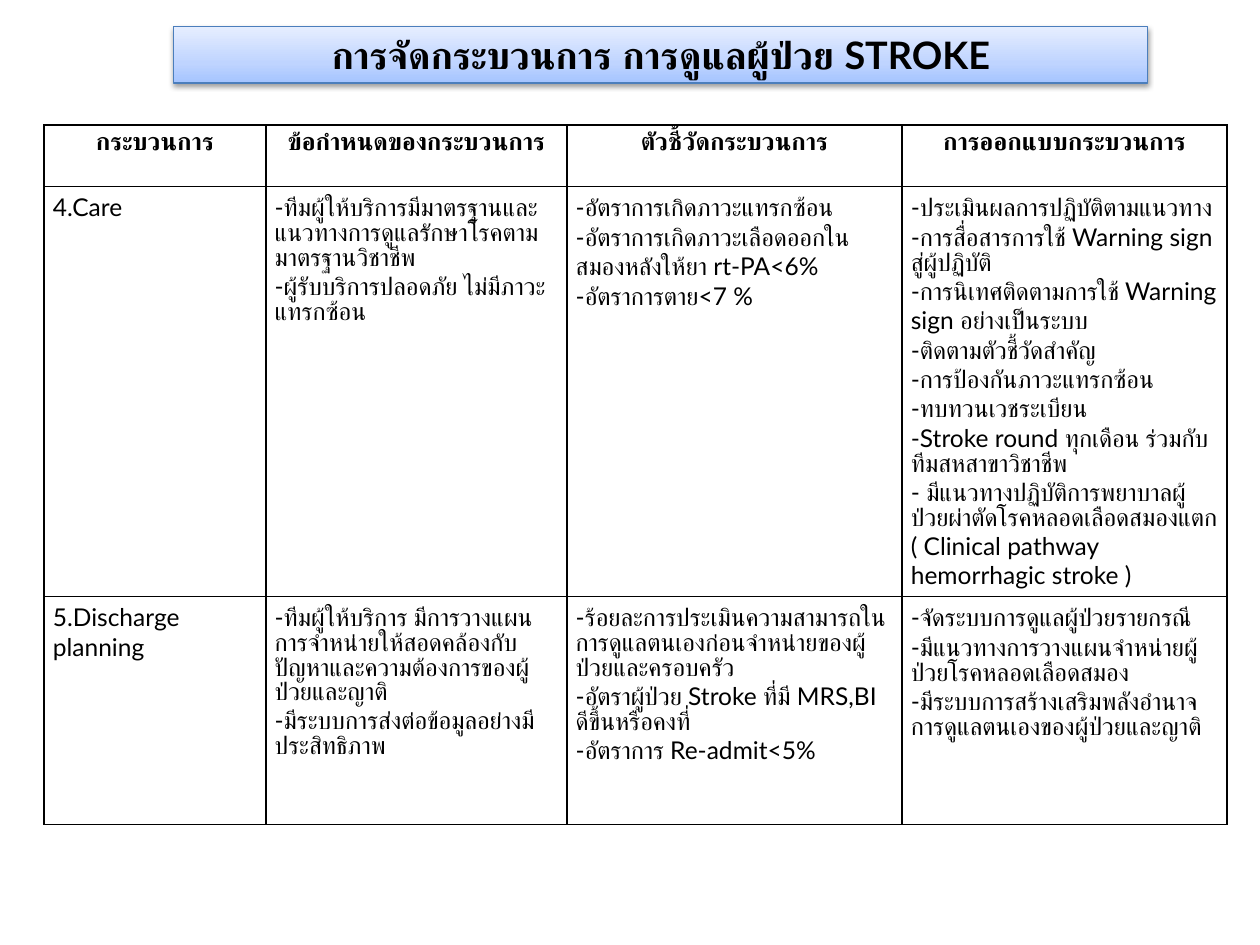
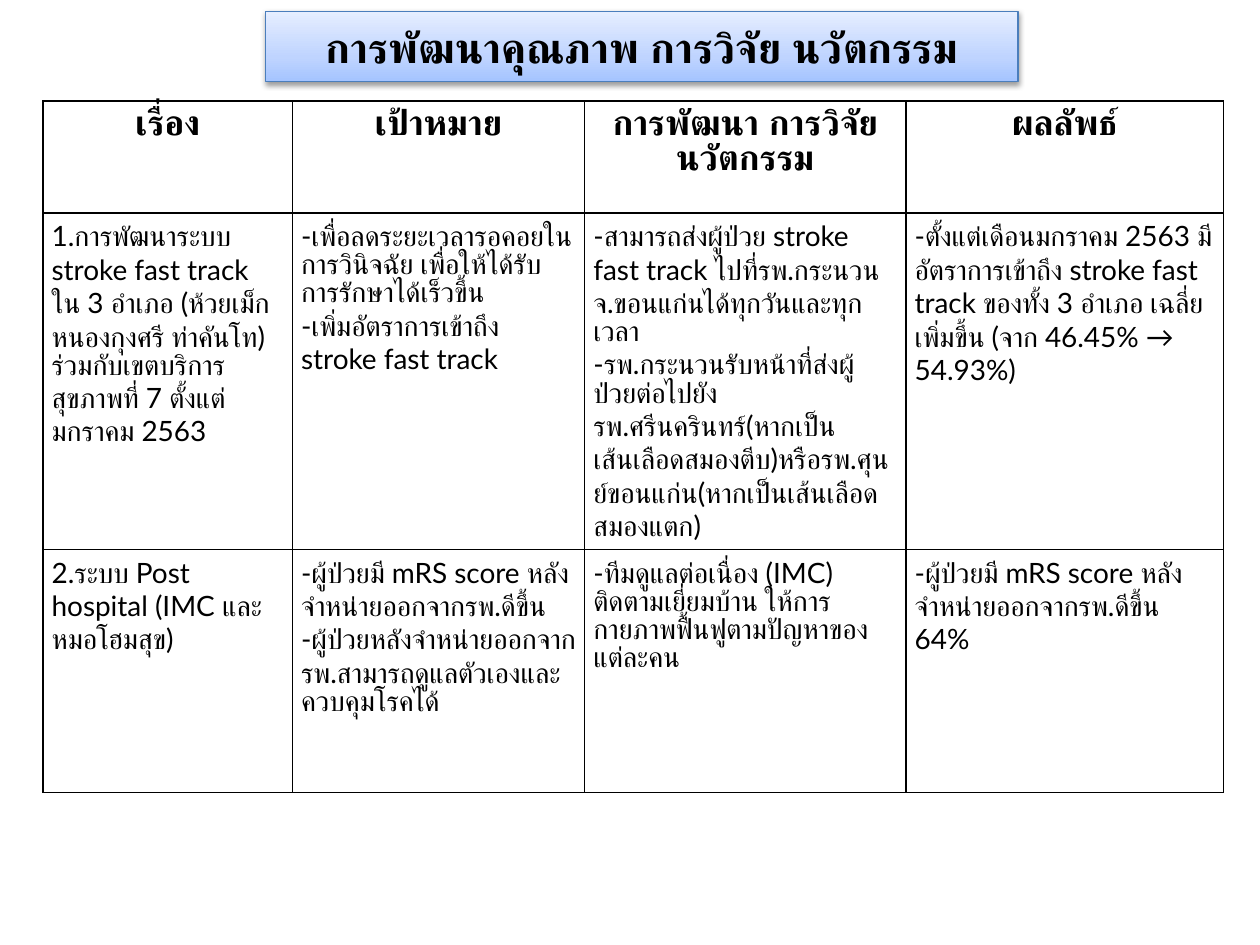
"""Build two slides on stroke care, each a title band above a table."""
from dataclasses import dataclass

from lxml import etree
from pptx import Presentation
from pptx import util as u
from pptx.dml import color
from pptx.enum import shapes, text
from pptx.oxml import ns


@dataclass(frozen=True)
class Theme:
    font: str = "Lato"
    ink: str = "000000"
    edge: str = "4B7EBC"
    band: tuple = ((0, "A4C4FF"), (35, "BFD4FF"), (100, "E6EEFF"))
    line: float = 0.75
    grid: float = 1
    pad: tuple = (0.07, 0.05)


def put(obj, vals):
    for name, val in vals.items():
        setattr(obj, name, val)


def node(home, tag, at=None, **vals):
    item = etree.Element(ns.qn(f"a:{tag}"), {k: str(v) for k, v in vals.items()})
    home.insert(len(home) if at is None else at, item)
    return item


class Deck:
    def __init__(self, theme):
        self.theme = theme
        self.file = Presentation()
        put(self.file, {"slide_width": u.Inches(10), "slide_height": u.Inches(7.5)})
        self.slide = None

    def page(self):
        self.slide = self.file.slides.add_slide(self.file.slide_layouts[6])

    def words(self, frame, copy, size, bold=False, mid=False):
        frame.text = copy
        frame.word_wrap = True
        look = {"name": self.theme.font, "size": u.Pt(size), "bold": bold}
        for para in frame.paragraphs:
            para.alignment = text.PP_ALIGN.CENTER if mid else text.PP_ALIGN.LEFT
            for run in para.runs:
                put(run.font, look)
                run.font.color.rgb = color.RGBColor.from_string(self.theme.ink)

    def title(self, box, copy, size):
        band = self.slide.shapes.add_shape(
            shapes.MSO_SHAPE.RECTANGLE, *map(u.Inches, box))
        band.shadow.inherit = False
        band.line.color.rgb = color.RGBColor.from_string(self.theme.edge)
        band.line.width = u.Pt(self.theme.line)
        props = band.element.spPr
        grad = node(props, "gradFill", 2, rotWithShape=1)
        stops = node(grad, "gsLst")
        for pos, tint in self.theme.band:
            node(node(stops, "gs", pos=pos * 1000), "srgbClr", val=tint)
        node(grad, "lin", ang=270 * 60000, scaled=0)
        glow = node(props.find(ns.qn("a:effectLst")), "outerShdw",
                    blurRad=u.Pt(3.1), dist=u.Pt(1.6), dir=90 * 60000, rotWithShape=0)
        node(node(glow, "srgbClr", val=self.theme.ink), "alpha", val=38000)
        band.text_frame.vertical_anchor = text.MSO_ANCHOR.MIDDLE
        self.words(band.text_frame, copy, size, True, True)

    def edges(self, cell):
        props = cell._tc.get_or_add_tcPr()
        for at, side in enumerate("LRTB"):
            line = node(props, f"ln{side}", at, w=u.Pt(self.theme.grid))
            node(node(line, "solidFill"), "srgbClr", val=self.theme.ink)

    def table(self, spot, cols, rows, data, head, body):
        size = (sum(cols), sum(rows))
        grid = self.slide.shapes.add_table(
            len(rows), len(cols), *map(u.Inches, spot + size)).table
        put(grid, {"first_row": False, "horz_banding": False})
        for col, wide in zip(grid.columns, cols):
            col.width = u.Inches(wide)
        side, top = map(u.Inches, self.theme.pad)
        pads = {"margin_left": side, "margin_right": side,
                "margin_top": top, "margin_bottom": top}
        for r, (row, tall) in enumerate(zip(grid.rows, rows)):
            row.height = u.Inches(tall)
            for cell, copy in zip(row.cells, data[r]):
                put(cell, pads)
                cell.fill.background()
                self.edges(cell)
                first = r == 0
                self.words(cell.text_frame, copy, head if first else body, first, first)


CARE = (
    ("กระบวนการ", "ข้อกำหนดของกระบวนการ", "ตัวชี้วัดกระบวนการ", "การออกแบบกระบวนการ"),
    ("4.Care",
     "-ทีมผู้ให้บริการมีมาตรฐานและแนวทางการดูแลรักษาโรคตามมาตรฐานวิชาชีพ\n"
     "-ผู้รับบริการปลอดภัย ไม่มีภาวะแทรกซ้อน",
     "-อัตราการเกิดภาวะแทรกซ้อน\n"
     "-อัตราการเกิดภาวะเลือดออกในสมองหลังให้ยา rt-PA<6%\n"
     "-อัตราการตาย<7 %",
     "-ประเมินผลการปฏิบัติตามแนวทาง\n"
     "-การสื่อสารการใช้ Warning sign สู่ผู้ปฏิบัติ\n"
     "-การนิเทศติดตามการใช้ Warning sign อย่างเป็นระบบ\n"
     "-ติดตามตัวชี้วัดสำคัญ\n"
     "-การป้องกันภาวะแทรกซ้อน\n"
     "-ทบทวนเวชระเบียน\n"
     "-Stroke round ทุกเดือน ร่วมกับทีมสหสาขาวิชาชีพ\n"
     "- มีแนวทางปฏิบัติการพยาบาลผู้ป่วยผ่าตัดโรคหลอดเลือดสมองแตก\n"
     "( Clinical pathway hemorrhagic stroke )"),
    ("5.Discharge planning",
     "-ทีมผู้ให้บริการ มีการวางแผนการจำหน่ายให้สอดคล้องกับปัญหาและความต้องการของผู้ป่วยและญาติ\n"
     "-มีระบบการส่งต่อข้อมูลอย่างมีประสิทธิภาพ",
     "-ร้อยละการประเมินความสามารถในการดูแลตนเองก่อนจำหน่ายของผู้ป่วยและครอบครัว\n"
     "-อัตราผู้ป่วย Stroke ที่มี MRS,BI ดีขึ้นหรือคงที่\n"
     "-อัตราการ Re-admit<5%",
     "-จัดระบบการดูแลผู้ป่วยรายกรณี\n"
     "-มีแนวทางการวางแผนจำหน่ายผู้ป่วยโรคหลอดเลือดสมอง\n"
     "-มีระบบการสร้างเสริมพลังอำนาจการดูแลตนเองของผู้ป่วยและญาติ"),
)

GROWTH = (
    ("เรื่อง", "เป้าหมาย", "การพัฒนา การวิจัย นวัตกรรม", "ผลลัพธ์"),
    ("1.การพัฒนาระบบ stroke fast track ใน 3 อำเภอ (ห้วยเม็ก หนองกุงศรี ท่าคันโท) "
     "ร่วมกับเขตบริการสุขภาพที่ 7 ตั้งแต่มกราคม 2563",
     "-เพื่อลดระยะเวลารอคอยในการวินิจฉัย เพื่อให้ได้รับการรักษาได้เร็วขึ้น\n"
     "-เพิ่มอัตราการเข้าถึง stroke fast track",
     "-สามารถส่งผู้ป่วย stroke fast track ไปที่รพ.กระนวน จ.ขอนแก่นได้ทุกวันและทุกเวลา\n"
     "-รพ.กระนวนรับหน้าที่ส่งผู้ป่วยต่อไปยังรพ.ศรีนครินทร์(หากเป็นเส้นเลือดสมองตีบ)"
     "หรือรพ.ศุนย์ขอนแก่น(หากเป็นเส้นเลือดสมองแตก)",
     "-ตั้งแต่เดือนมกราคม 2563 มีอัตราการเข้าถึง stroke fast track ของทั้ง 3 อำเภอ "
     "เฉลี่ยเพิ่มขึ้น (จาก 46.45% → 54.93%)"),
    ("2.ระบบ Post hospital (IMC และ หมอโฮมสุข)",
     "-ผู้ป่วยมี mRS score หลังจำหน่ายออกจากรพ.ดีขึ้น\n"
     "-ผู้ป่วยหลังจำหน่ายออกจากรพ.สามารถดูแลตัวเองและควบคุมโรคได้",
     "-ทีมดูแลต่อเนื่อง (IMC) ติดตามเยี่ยมบ้าน ให้การกายภาพฟื้นฟูตามปัญหาของแต่ละคน",
     "-ผู้ป่วยมี mRS score หลังจำหน่ายออกจากรพ.ดีขึ้น 64%"),
)


def main():
    deck = Deck(Theme())
    deck.page()
    deck.title((1.38, 0.21, 7.73, 0.45), "การจัดกระบวนการ การดูแลผู้ป่วย STROKE", 21.6)
    deck.table((0.35, 0.99), (1.76, 2.39, 2.66, 2.58), (0.49, 3.25, 1.81), CARE, 14, 14)
    deck.page()
    deck.title((2.11, 0.09, 5.97, 0.56), "การพัฒนาคุณภาพ การวิจัย นวัตกรรม", 24)
    deck.table((0.34, 0.8), (1.98, 2.32, 2.55, 2.52), (0.89, 2.67, 1.93), GROWTH, 20, 16)
    deck.file.save("out.pptx")


if __name__ == "__main__":
    main()
